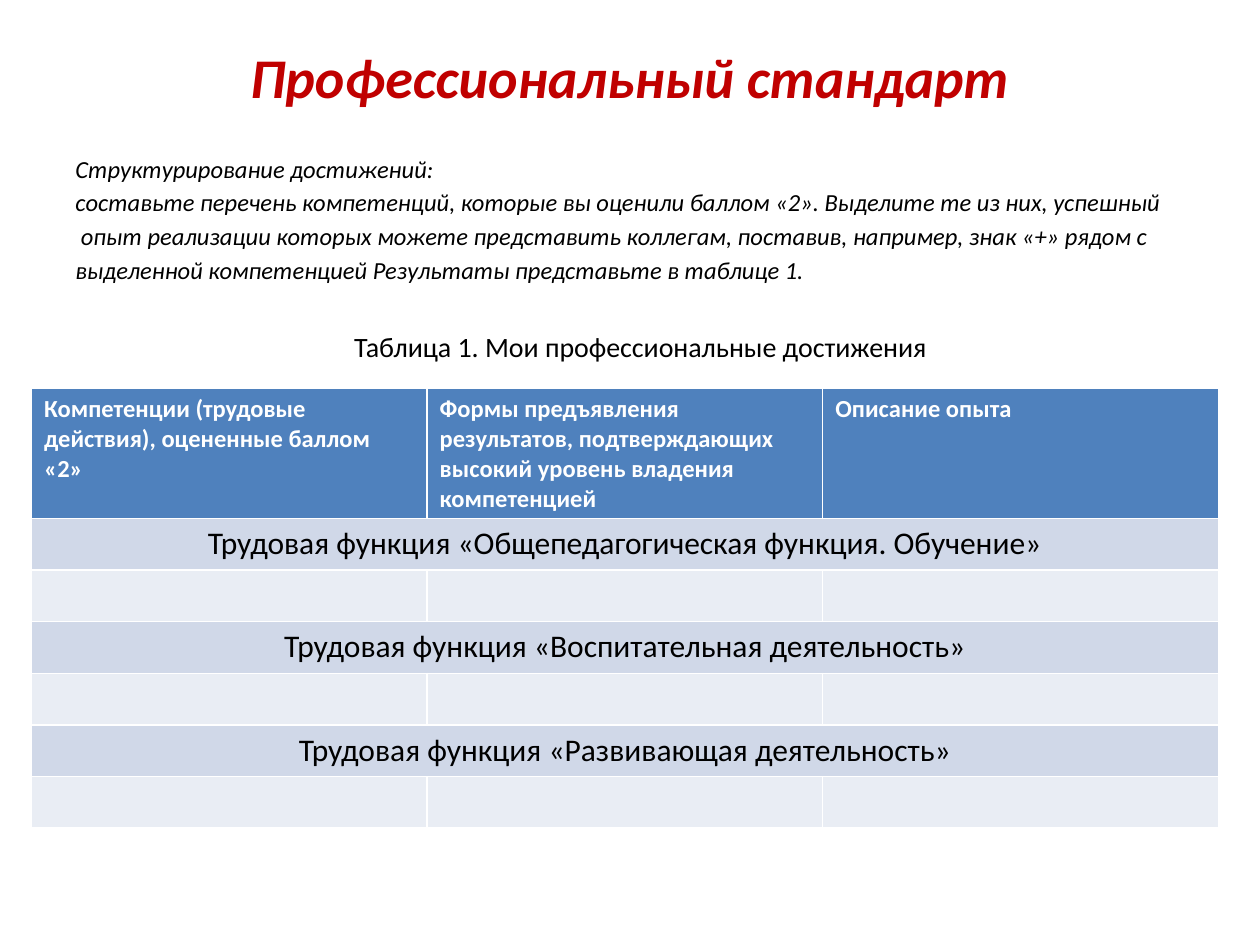
from pptx import Presentation
from pptx.dml.color import RGBColor
from pptx.enum.text import MSO_ANCHOR as Anchor, PP_ALIGN as Align
from pptx.util import Inches, Pt

FONT = "Calibri"
RED = RGBColor(0xC0, 0x00, 0x00)
BLACK = RGBColor(0x00, 0x00, 0x00)
WHITE = RGBColor(0xFF, 0xFF, 0xFF)
HEADER_BLUE = RGBColor(0x4F, 0x81, 0xBD)
BAND_BLUE = RGBColor(0xD0, 0xD8, 0xE8)
PALE_BLUE = RGBColor(0xE9, 0xED, 0xF4)

TITLE = "Профессиональный стандарт"
INSTRUCTIONS = [
    "Структурирование достижений:",
    "составьте перечень компетенций, которые вы оценили баллом «2». Выделите те из них, успешный",
    " опыт реализации которых можете представить коллегам, поставив, например, знак «+» рядом с",
    "выделенной компетенцией Результаты представьте в таблице 1.",
]
CAPTION = "Таблица 1. Мои профессиональные достижения"
HEADERS = [
    "Компетенции (трудовые действия), оцененные баллом «2»",
    "Формы предъявления результатов, подтверждающих высокий уровень владения компетенцией",
    "Описание опыта",
]
FUNCTIONS = [
    "Трудовая функция «Общепедагогическая функция. Обучение»",
    "Трудовая функция «Воспитательная деятельность»",
    "Трудовая функция «Развивающая деятельность»",
]


def write(para, text, size, color=BLACK, bold=False, italic=False, align=Align.LEFT, before=0):
    """Put formatted text into a paragraph."""
    para.text = text
    para.alignment = align
    para.space_before = Pt(before)
    font = para.font
    font.name, font.size, font.bold, font.italic = FONT, Pt(size), bold, italic
    font.color.rgb = color


def add_box(slide, left, top, width, height, anchor=Anchor.TOP):
    """Add a wrapping text box and return its text frame."""
    box = slide.shapes.add_textbox(Inches(left), Inches(top), Inches(width), Inches(height))
    frame = box.text_frame
    frame.word_wrap = True
    frame.vertical_anchor = anchor
    return frame


def add_title(slide):
    """Add the slide title."""
    frame = add_box(slide, 0.5, 0.17, 9, 0.87, Anchor.MIDDLE)
    write(frame.paragraphs[0], TITLE, 32, RED, bold=True, italic=True, align=Align.CENTER)


def add_body(slide):
    """Add the instructions and the table caption."""
    frame = add_box(slide, 0.5, 1.17, 9.17, 1.8)
    for index, line in enumerate(INSTRUCTIONS):
        para = frame.add_paragraph() if index else frame.paragraphs[0]
        write(para, line, 14, italic=True, before=2.5 if index else 0)
    write(frame.add_paragraph(), CAPTION, 16, align=Align.CENTER, before=25.7)


def fill_cell(cell, color):
    """Give a cell a solid fill."""
    cell.fill.solid()
    cell.fill.fore_color.rgb = color


def add_achievements_table(slide):
    """Add the table with a merged band and an empty row per function."""
    row_count = 1 + 2 * len(FUNCTIONS)
    table = slide.shapes.add_table(
        row_count, len(HEADERS), Inches(0.25), Inches(3.08), Inches(9.42), Inches(3.47)
    ).table
    for column in table.columns:
        column.width = Inches(3.14)
    for index, row in enumerate(table.rows):
        row.height = Inches(0.41 if index else 1.03)
        color = (BAND_BLUE if index % 2 else PALE_BLUE) if index else HEADER_BLUE
        for cell in row.cells:
            fill_cell(cell, color)
    for column, text in enumerate(HEADERS):
        write(table.cell(0, column).text_frame.paragraphs[0], text, 14, WHITE, bold=True)
    for index, text in enumerate(FUNCTIONS):
        band = table.cell(1 + 2 * index, 0)
        band.merge(table.cell(1 + 2 * index, len(HEADERS) - 1))
        write(band.text_frame.paragraphs[0], text, 18, align=Align.CENTER)


def main():
    """Build and save the slide."""
    deck = Presentation()
    deck.slide_width, deck.slide_height = Inches(10), Inches(7.5)
    slide = deck.slides.add_slide(deck.slide_layouts[6])
    add_title(slide)
    add_body(slide)
    add_achievements_table(slide)
    deck.save("out.pptx")


if __name__ == "__main__":
    main()
